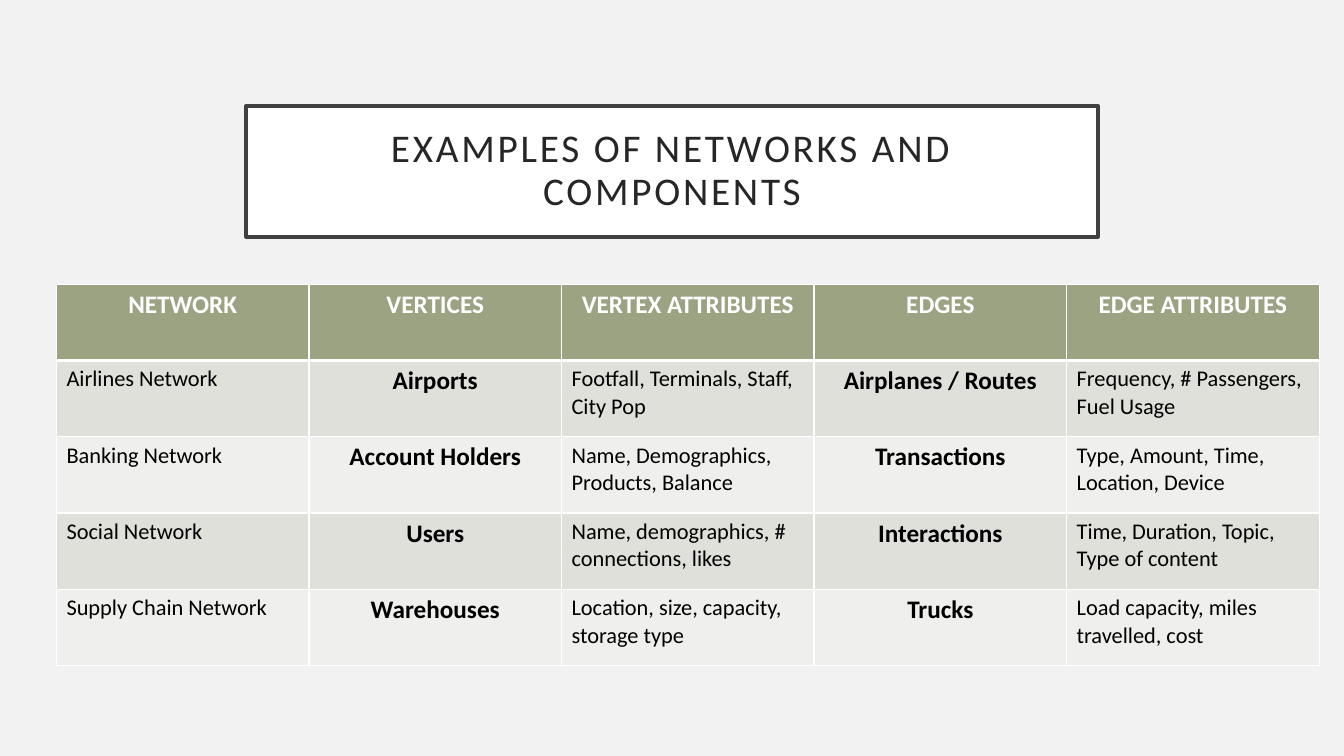
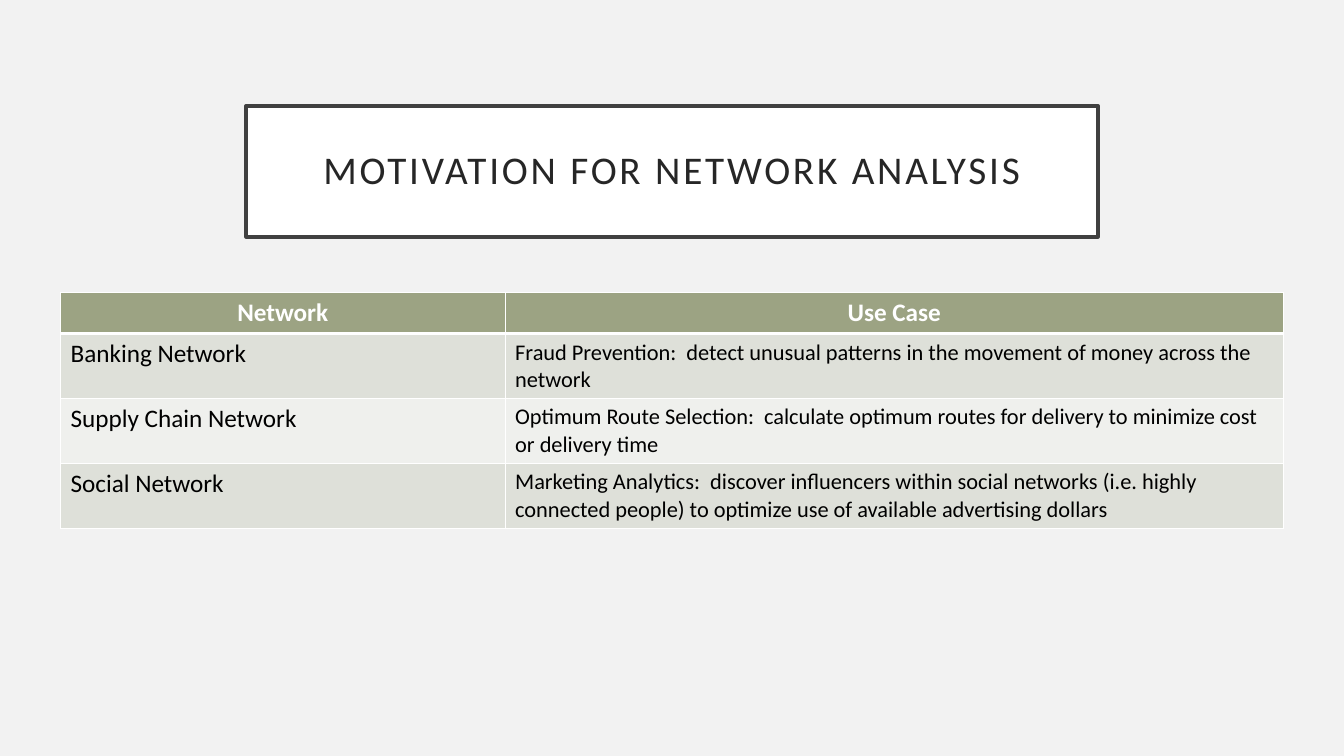
import pptx
import pptx.dml.color
import pptx.enum.shapes
import pptx.enum.text
import pptx.oxml.ns
import pptx.util
from lxml import etree

Inches = pptx.util.Inches
Pt = pptx.util.Pt
RGBColor = pptx.dml.color.RGBColor
Align = pptx.enum.text.PP_ALIGN
qn = pptx.oxml.ns.qn

FONT = "Calibri"
PAGE_GREY = RGBColor(0xF2, 0xF2, 0xF2)
WHITE = RGBColor(0xFF, 0xFF, 0xFF)
BLACK = RGBColor(0x00, 0x00, 0x00)
FRAME_GREY = RGBColor(0x40, 0x40, 0x40)
TITLE_GREY = RGBColor(0x26, 0x26, 0x26)
HEADER_GREEN = RGBColor(0x9C, 0xA3, 0x83)
BANDS = (RGBColor(0xDE, 0xE0, 0xD9), RGBColor(0xEF, 0xF0, 0xED))

# Column styles: size, bold, alignment
HEADER = (18, True, Align.CENTER)
KEY = (18, True, Align.CENTER)
LABEL = (18, False, Align.LEFT)
DETAIL = (16, False, Align.LEFT)

COMPONENTS = [
    ("NETWORK", "VERTICES", "VERTEX ATTRIBUTES", "EDGES", "EDGE ATTRIBUTES"),
    ("Airlines Network", "Airports", "Footfall, Terminals, Staff, City Pop",
     "Airplanes / Routes", "Frequency, # Passengers, Fuel Usage"),
    ("Banking Network", "Account Holders", "Name, Demographics, Products, Balance",
     "Transactions", "Type, Amount, Time, Location, Device"),
    ("Social Network", "Users", "Name, demographics, # connections, likes",
     "Interactions", "Time, Duration, Topic, Type of content"),
    ("Supply Chain Network", "Warehouses", "Location, size, capacity, storage type",
     "Trucks", "Load capacity, miles travelled, cost"),
]

USE_CASES = [
    ("Network", "Use Case"),
    ("Banking Network",
     "Fraud Prevention:  detect unusual patterns in the movement of money "
     "across the network"),
    ("Supply Chain Network",
     "Optimum Route Selection:  calculate optimum routes for delivery to "
     "minimize cost or delivery time"),
    ("Social Network",
     "Marketing Analytics:  discover influencers within social networks "
     "(i.e. highly connected people) to optimize use of available "
     "advertising dollars"),
]


def style_paragraph(para, size, bold, align, color):
    para.alignment = align
    para.font.name = FONT
    para.font.size = Pt(size)
    para.font.bold = bold
    para.font.color.rgb = color


def add_titled_page(deck, title):
    page = deck.slides.add_slide(deck.slide_layouts[6])
    box = page.shapes.add_shape(
        pptx.enum.shapes.MSO_SHAPE.RECTANGLE,
        Inches(2.44), Inches(1.05), Inches(8.45), Inches(1.3))
    box.shadow.inherit = False
    box.fill.solid()
    box.fill.fore_color.rgb = WHITE
    box.line.color.rgb = FRAME_GREY
    box.line.width = Pt(2.5)
    frame = box.text_frame
    frame.word_wrap = True
    frame.vertical_anchor = pptx.enum.text.MSO_ANCHOR.MIDDLE
    frame.margin_left = frame.margin_right = Inches(0.2)
    frame.margin_top = frame.margin_bottom = Inches(0.2)
    para = frame.paragraphs[0]
    span = para.add_run()
    span.text = title
    style_paragraph(para, 28, False, Align.CENTER, TITLE_GREY)
    para.line_spacing = 0.9
    span.font._element.set("spc", "200")
    return page


def set_borders(cell, top, bottom):
    """Draw white cell borders; widths in points. Call before filling the cell."""
    properties = cell._tc.get_or_add_tcPr()
    for side, width in (("L", 1), ("R", 1), ("T", top), ("B", bottom)):
        line = etree.SubElement(properties, qn(f"a:ln{side}"), w=str(Pt(width)))
        fill = etree.SubElement(line, qn("a:solidFill"))
        etree.SubElement(fill, qn("a:srgbClr"), val=str(WHITE))


def add_banded_table(page, left, top, widths, heights, rows, column_styles):
    table = page.shapes.add_table(
        len(rows), len(widths), Inches(left), Inches(top),
        Inches(sum(widths)), Inches(sum(heights))).table
    table.horz_banding = False
    for column, width in zip(table.columns, widths):
        column.width = Inches(width)
    for index, (texts, height) in enumerate(zip(rows, heights)):
        table.rows[index].height = Inches(height)
        is_header = index == 0
        band = HEADER_GREEN if is_header else BANDS[(index - 1) % 2]
        for column, (text, style) in enumerate(zip(texts, column_styles)):
            cell = table.cell(index, column)
            set_borders(cell, top=3 if index == 1 else 1,
                        bottom=3 if is_header else 1)
            cell.fill.solid()
            cell.fill.fore_color.rgb = band
            cell.text = text
            style_paragraph(cell.text_frame.paragraphs[0],
                            *(HEADER if is_header else style),
                            WHITE if is_header else BLACK)


def main():
    deck = pptx.Presentation()
    deck.slide_width = Inches(13.33)
    deck.slide_height = Inches(7.5)
    background = deck.slide_master.background.fill
    background.solid()
    background.fore_color.rgb = PAGE_GREY

    page = add_titled_page(deck, "EXAMPLES OF NETWORKS AND COMPONENTS")
    add_banded_table(page, 0.56, 2.82, [2.505] * 5, [0.757] * 5, COMPONENTS,
                     (DETAIL, KEY, DETAIL, KEY, DETAIL))

    page = add_titled_page(deck, "MOTIVATION FOR NETWORK ANALYSIS")
    add_banded_table(page, 0.6, 2.9, [4.41, 7.72], [0.41] + [0.64] * 3,
                     USE_CASES, (LABEL, DETAIL))

    deck.save("out.pptx")


if __name__ == "__main__":
    main()
